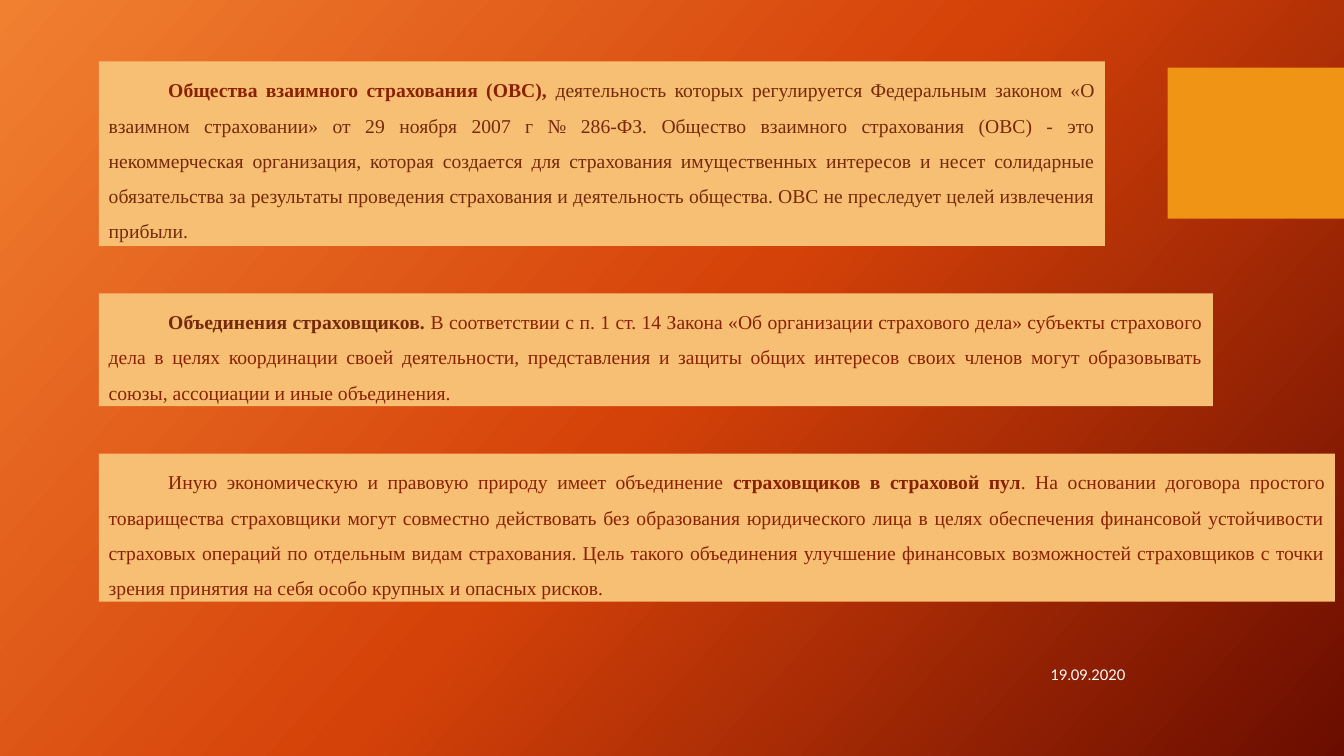
from copy import deepcopy

from pptx import Presentation
from pptx.dml.color import RGBColor
from pptx.enum.shapes import MSO_SHAPE
from pptx.enum.text import MSO_ANCHOR, MSO_AUTO_SIZE, PP_ALIGN
from pptx.oxml.ns import qn
from pptx.util import Inches, Pt

COLORS = {
    "glow": "F18031", "flame": "D54209", "ember": "6A0D00",
    "accent": "F09415", "panel": "F6BF73",
    "rust": "8A2104", "brown": "76290B", "white": "FFFFFF",
}
BODY_FONT = {"name": "Times New Roman", "size": Pt(14)}
DATE_FONT = {"name": "Lato", "size": Pt(10.5)}
BODY_PARAGRAPH = {"alignment": PP_ALIGN.JUSTIFY, "line_spacing": 1.5}
PANEL_FRAME = {"word_wrap": True, "vertical_anchor": MSO_ANCHOR.TOP,
               "auto_size": MSO_AUTO_SIZE.SHAPE_TO_FIT_TEXT}
DATE_FRAME = {"word_wrap": True, "vertical_anchor": MSO_ANCHOR.MIDDLE}
FIRST_LINE_INDENT = Inches(0.59)
PANEL_LEFT = 0.98

# Each panel: top, width, height, then runs of (text, colour, bold)
PANELS = [
    (0.61, 9.98, 1.83, [
        ("Общества взаимного страхования (ОВС), ", "rust", True),
        ("деятельность которых регулируется Федеральным законом «О взаимном "
         "страховании» от 29 ноября 2007 г № 286-ФЗ. Общество взаимного "
         "страхования (ОВС) - это некоммерческая организация, которая создается "
         "для страхования имущественных интересов и несет солидарные "
         "обязательства за результаты проведения страхования и деятельность "
         "общества. ОВС не преследует целей извлечения прибыли.", "brown", False),
    ]),
    (2.91, 11.05, 1.12, [
        ("Объединения страховщиков. ", "brown", True),
        ("В соответствии с п. 1 ст. 14 Закона «Об организации страхового дела» "
         "субъекты страхового дела в целях координации своей деятельности, "
         "представления и защиты общих интересов своих членов могут "
         "образовывать союзы, ассоциации и иные объединения.", "rust", False),
    ]),
    (4.5, 12.26, 1.47, [
        ("Иную экономическую и правовую природу имеет объединение ", "rust", False),
        ("страховщиков в страховой пул", "rust", True),
        (". На основании договора простого товарищества страховщики могут "
         "совместно действовать без образования юридического лица в целях "
         "обеспечения финансовой устойчивости страховых операций по отдельным "
         "видам страхования. Цель такого объединения улучшение финансовых "
         "возможностей страховщиков с точки зрения принятия на себя особо "
         "крупных и опасных рисков.", "rust", False),
    ]),
]


def color(name):
    return RGBColor.from_string(COLORS[name])


def apply(target, values):
    for attribute, value in values.items():
        setattr(target, attribute, value)


def add_run(paragraph, text, color_name, font_values):
    run = paragraph.add_run()
    run.text = text
    apply(run.font, font_values)
    run.font.color.rgb = color(color_name)


def paint_background(slide):
    fill = slide.background.fill
    fill.gradient()
    fill.gradient_angle = 318
    # The default gradient has two stops; a third is needed
    stop_list = slide.element.find(".//" + qn("a:gsLst"))
    stop_list.append(deepcopy(stop_list[0]))
    for stop, (position, name) in zip(
            fill.gradient_stops, [(0, "glow"), (0.5, "flame"), (1, "ember")]):
        stop.position = position
        stop.color.rgb = color(name)


def add_block(slide, box, color_name):
    block = slide.shapes.add_shape(MSO_SHAPE.RECTANGLE, *map(Inches, box))
    block.shadow.inherit = False
    block.fill.solid()
    block.fill.fore_color.rgb = color(color_name)
    block.line.fill.background()
    return block


def add_panel(slide, box, runs):
    frame = add_block(slide, box, "panel").text_frame
    apply(frame, PANEL_FRAME)
    paragraph = frame.paragraphs[0]
    apply(paragraph, BODY_PARAGRAPH)
    properties = paragraph._p.get_or_add_pPr()
    properties.set("marL", "0")
    properties.set("indent", str(FIRST_LINE_INDENT))
    for text, color_name, bold in runs:
        add_run(paragraph, text, color_name, {**BODY_FONT, "bold": bold})


def add_date(slide, box, text):
    frame = slide.shapes.add_textbox(*map(Inches, box)).text_frame
    apply(frame, DATE_FRAME)
    paragraph = frame.paragraphs[0]
    paragraph.alignment = PP_ALIGN.RIGHT
    add_run(paragraph, text, "white", DATE_FONT)


def main():
    deck = Presentation()
    deck.slide_width, deck.slide_height = Inches(13.33), Inches(7.5)
    slide = deck.slides.add_slide(deck.slide_layouts[6])

    # Backdrop and accent block
    paint_background(slide)
    add_block(slide, (11.58, 0.67, 1.75, 1.5), "accent")

    # Date
    add_date(slide, (8.26, 6.49, 3, 0.4), "19.09.2020")

    # Text panels
    for top, width, height, runs in PANELS:
        add_panel(slide, (PANEL_LEFT, top, width, height), runs)

    deck.save("out.pptx")


if __name__ == "__main__":
    main()
